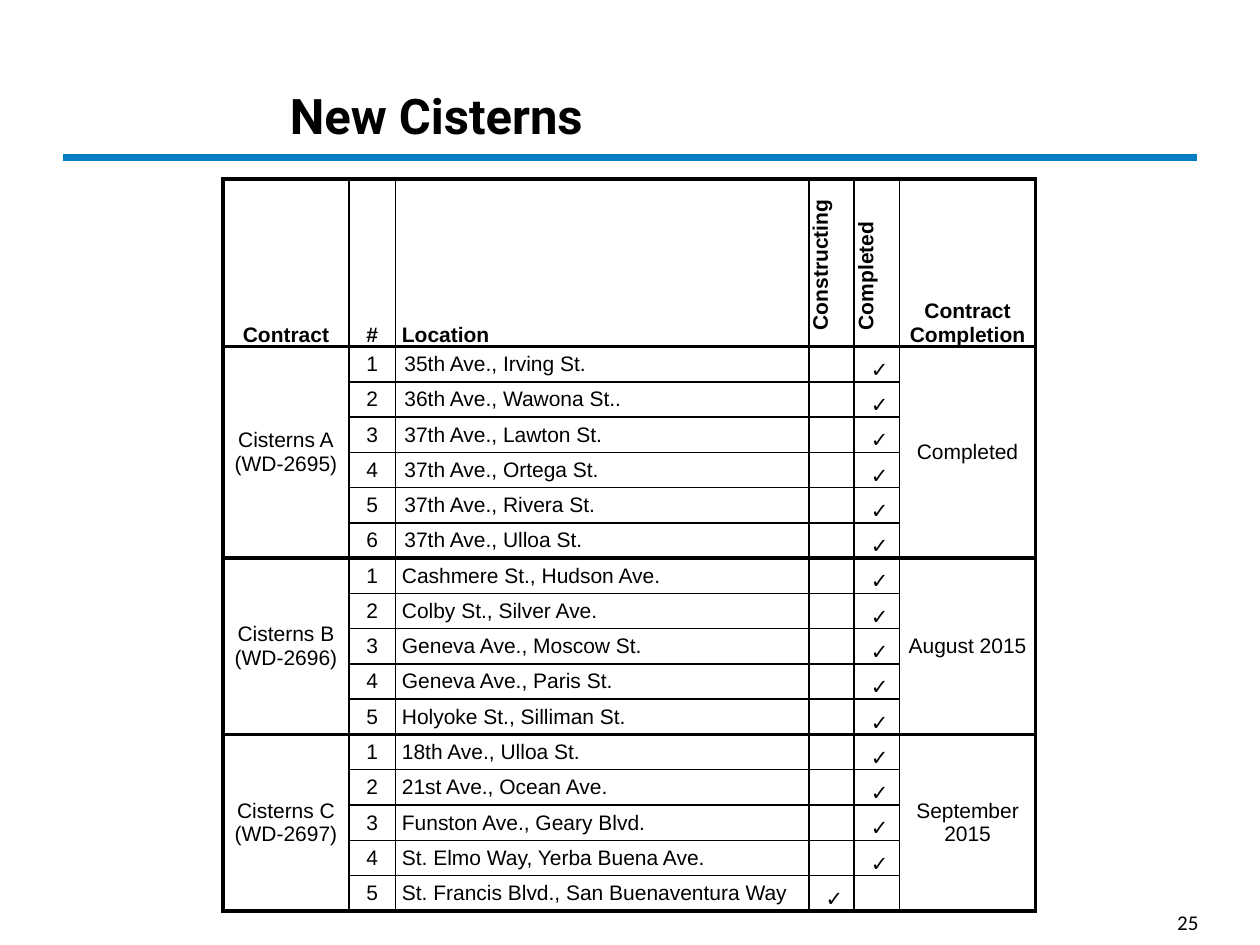
"""Build the New Cisterns contract status slide."""
from dataclasses import dataclass

from lxml import etree
from pptx import Presentation
from pptx.dml.color import RGBColor
from pptx.enum.shapes import MSO_CONNECTOR
from pptx.enum.text import MSO_ANCHOR, PP_ALIGN
from pptx.oxml.ns import qn
from pptx.util import Inches, Pt

LEFT, CENTER, RIGHT = PP_ALIGN.LEFT, PP_ALIGN.CENTER, PP_ALIGN.RIGHT
MIDDLE, BOTTOM = MSO_ANCHOR.MIDDLE, MSO_ANCHOR.BOTTOM
STRAIGHT = MSO_CONNECTOR.STRAIGHT


@dataclass(frozen=True)
class Theme:
    """Colours, fonts, type sizes and line widths of the slide."""
    ink: str = "000000"
    accent: str = "007DC3"
    title_font: str = "Roboto"
    table_font: str = "Arial"
    number_font: str = "Calibri"
    title_size: int = 28
    text_size: int = 12
    thin: float = 1
    heavy: float = 2.25
    rule: float = 4.5


THEME = Theme()
CHECK = " ✓"
HEADERS = ["Contract", "#", "Location", "Constructing", "Completed", "Contract Completion"]
COLUMN_WIDTHS = [1, 0.37, 3.28, 0.36, 0.36, 1.08]
HEADER_HEIGHT, ROW_HEIGHT = 1.33, 0.28
CONTRACT, NUMBER, LOCATION, CONSTRUCTING, COMPLETED, COMPLETION = range(6)
CONTRACTS = [
    ("Cisterns A\n(WD-2695)", "Completed", 0.07, [
        "35th Ave., Irving St.", "36th Ave., Wawona St..", "37th Ave., Lawton St.",
        "37th Ave., Ortega St.", "37th Ave., Rivera St.", "37th Ave., Ulloa St."]),
    ("Cisterns B\n(WD-2696)", "August 2015", 0.05, [
        "Cashmere St., Hudson Ave.", "Colby St., Silver Ave.", "Geneva Ave., Moscow St.",
        "Geneva Ave., Paris St.", "Holyoke St., Silliman St."]),
    ("Cisterns C\n(WD-2697)", "September 2015", 0.05, [
        "18th Ave., Ulloa St.", "21st Ave., Ocean Ave.", "Funston Ave., Geary Blvd.",
        "St. Elmo Way, Yerba Buena Ave.", "St. Francis Blvd., San Buenaventura Way"]),
]
UNDER_CONSTRUCTION = {"St. Francis Blvd., San Buenaventura Way"}


def style_paragraph(paragraph, font_name, size, bold=False, align=LEFT):
    """Set the alignment and font of a paragraph."""
    paragraph.alignment = align
    font = paragraph.font
    font.name, font.size, font.bold = font_name, Pt(size), bold
    font.color.rgb = RGBColor.from_string(THEME.ink)


def add_title(slide, text):
    """Place the title in its placeholder."""
    title = slide.shapes.title
    title.left, title.top = Inches(2.2), Inches(0.7)
    title.width, title.height = Inches(7.3), Inches(0.5)
    title.text_frame.text = text
    title.text_frame.vertical_anchor = MIDDLE
    heading = title.text_frame.paragraphs[0]
    heading.line_spacing = 0.85
    style_paragraph(heading, THEME.title_font, THEME.title_size, bold=True)


def add_title_rule(slide):
    """Draw the coloured rule under the title."""
    rule = slide.shapes.add_connector(
        STRAIGHT, Inches(0.5), Inches(1.25), Inches(9.5), Inches(1.25))
    rule.line.color.rgb = RGBColor.from_string(THEME.accent)
    rule.line.width = Pt(THEME.rule)
    etree.SubElement(rule._element.spPr, qn("a:effectLst"))


def add_page_number(slide, text):
    """Write the page number at the lower right."""
    page_number = slide.shapes.add_textbox(Inches(7.21), Inches(6.97), Inches(2.4), Inches(0.5))
    frame = page_number.text_frame
    frame.word_wrap = True
    frame.vertical_anchor = BOTTOM
    frame.text = text
    style_paragraph(frame.paragraphs[0], THEME.number_font, THEME.text_size, align=RIGHT)


def set_borders(cell, **widths):
    """Draw the given sides of a cell, in the order L, R, T, B."""
    properties = cell._tc.get_or_add_tcPr()
    for side, width in widths.items():
        line = etree.SubElement(properties, qn(f"a:ln{side}"), w=str(Pt(width)))
        fill = etree.SubElement(line, qn("a:solidFill"))
        etree.SubElement(fill, qn("a:srgbClr"), val=THEME.ink)


def frame_cell(cell, column, starts, ends):
    """Outline a cell, heavily around the table and between contracts."""
    def weight(is_heavy):
        return THEME.heavy if is_heavy else THEME.thin

    widths = {"L": weight(column == CONTRACT), "R": weight(column == COMPLETION)}
    merged = column in (CONTRACT, COMPLETION)
    if starts or not merged:
        widths["T"] = weight(starts)
    if starts or ends or not merged:
        widths["B"] = weight(ends or merged)
    set_borders(cell, **widths)
    cell.fill.background()


def fill_cell(cell, text="", align=CENTER, anchor=MIDDLE, bold=False, inset=0.05):
    """Write text into a cell and set its margins."""
    cell.margin_left = cell.margin_right = Inches(inset)
    cell.margin_top = cell.margin_bottom = 0
    cell.vertical_anchor = anchor
    cell.text_frame.text = text
    for paragraph in cell.text_frame.paragraphs:
        style_paragraph(paragraph, THEME.table_font, THEME.text_size, bold, align)
        if not text:
            etree.SubElement(paragraph._p, qn("a:endParaRPr"), sz=str(THEME.text_size * 100))


def fill_header(table):
    """Write the header row, turning the status headings upright."""
    for column, heading in enumerate(HEADERS):
        cell = table.cell(0, column)
        upright = column in (CONSTRUCTING, COMPLETED)
        align = LEFT if upright or column == LOCATION else CENTER
        fill_cell(cell, heading, align, MIDDLE if upright else BOTTOM, bold=True)
        if upright:
            cell._tc.get_or_add_tcPr().set("vert", "vert270")
            indent = cell.text_frame.paragraphs[0]._p.get_or_add_pPr()
            indent.set("marL", str(Inches(0.08)))
        frame_cell(cell, column, starts=True, ends=True)


def fill_contract(table, first_row, name, completion, inset, locations):
    """Write one contract with a row for each of its cisterns."""
    last_row = first_row + len(locations) - 1
    for row, location in enumerate(locations, first_row):
        status = CONSTRUCTING if location in UNDER_CONSTRUCTION else COMPLETED
        for column in range(len(HEADERS)):
            cell = table.cell(row, column)
            if column == NUMBER:
                fill_cell(cell, str(row - first_row + 1))
            elif column == LOCATION:
                fill_cell(cell, location, LEFT, inset=inset)
            elif column == status:
                fill_cell(cell, CHECK, anchor=BOTTOM, bold=True)
            else:
                fill_cell(cell)
            frame_cell(cell, column, row == first_row, row == last_row)
    for column, text in ((CONTRACT, name), (COMPLETION, completion)):
        table.cell(first_row, column).merge(table.cell(last_row, column))
        fill_cell(table.cell(first_row, column), text)


def add_cistern_table(slide):
    """Add the table of cisterns grouped by contract."""
    row_count = 1 + sum(len(locations) for *_, locations in CONTRACTS)
    height = HEADER_HEIGHT + ROW_HEIGHT * (row_count - 1)
    table = slide.shapes.add_table(
        row_count, len(HEADERS), Inches(1.77), Inches(1.42),
        Inches(sum(COLUMN_WIDTHS)), Inches(height)).table
    table.first_row = table.horz_banding = False
    for column, width in zip(table.columns, COLUMN_WIDTHS):
        column.width = Inches(width)
    for index, row in enumerate(table.rows):
        row.height = Inches(ROW_HEIGHT if index else HEADER_HEIGHT)
    fill_header(table)
    first_row = 1
    for name, completion, inset, locations in CONTRACTS:
        fill_contract(table, first_row, name, completion, inset, locations)
        first_row += len(locations)


def main():
    """Build and save the slide."""
    presentation = Presentation()
    presentation.slide_width, presentation.slide_height = Inches(10), Inches(7.5)
    slide = presentation.slides.add_slide(presentation.slide_layouts[5])
    add_title_rule(slide)
    add_title(slide, "New Cisterns")
    add_page_number(slide, "25")
    add_cistern_table(slide)
    presentation.save("out.pptx")


if __name__ == "__main__":
    main()
